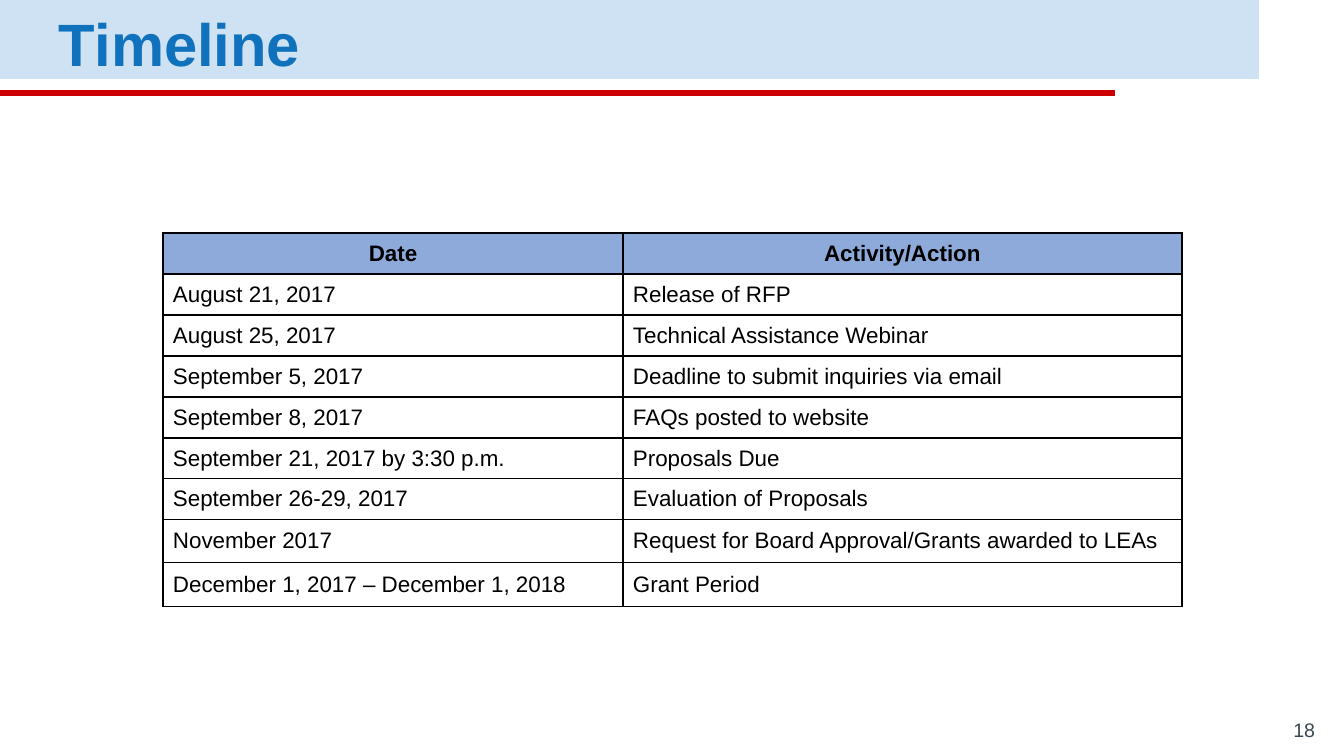
from lxml import etree
from pptx import Presentation
from pptx import util as u
from pptx.dml.color import RGBColor
from pptx.enum import shapes, text
from pptx.oxml import ns

EMU_PER_PX = 914400 / 134.4
FONT = "Arial"
PALE_BLUE = RGBColor(0xCF, 0xE2, 0xF3)
RED = RGBColor(0xCC, 0x00, 0x00)
TITLE_BLUE = RGBColor(0x10, 0x71, 0xBD)
SLATE = RGBColor(0x3A, 0x49, 0x50)
HEADER_BLUE = RGBColor(0x8E, 0xAA, 0xDB)
BLACK = RGBColor(0x00, 0x00, 0x00)

COLUMN_WIDTHS = [460, 559]
ROW_HEIGHTS = [41] * 7 + [43, 44]
TIMELINE = [
    ("Date", "Activity/Action"),
    ("August 21, 2017", "Release of RFP"),
    ("August 25, 2017", "Technical Assistance Webinar"),
    ("September 5, 2017", "Deadline to submit inquiries via email"),
    ("September 8, 2017", "FAQs posted to website"),
    ("September 21, 2017 by 3:30 p.m.", "Proposals Due"),
    ("September 26-29, 2017", "Evaluation of Proposals"),
    ("November 2017", "Request for Board Approval/Grants awarded to LEAs"),
    ("December 1, 2017 – December 1, 2018", "Grant Period"),
]


def px(length):
    return u.Emu(round(length * EMU_PER_PX))


def format_para(para, size, color, bold=False, align=text.PP_ALIGN.LEFT):
    para.alignment = align
    for span in para.runs:
        span.font.name = FONT
        span.font.size = u.Pt(size)
        span.font.bold = bold
        span.font.color.rgb = color


def set_margins(holder, side, upright):
    """Set the insets of a text frame or a table cell."""
    holder.margin_left = holder.margin_right = px(side)
    holder.margin_top = holder.margin_bottom = px(upright)


def add_bar(page, top, width, height, color):
    bar = page.shapes.add_shape(
        shapes.MSO_SHAPE.RECTANGLE, 0, px(top), px(width), px(height))
    bar.shadow.inherit = False
    bar.fill.solid()
    bar.fill.fore_color.rgb = color
    bar.line.fill.background()


def fill_title(page, words):
    title = page.shapes.title
    title.left, title.top, title.width, title.height = map(px, (46, 4, 1213, 66))
    frame = title.text_frame
    frame.text = words
    frame.auto_size = text.MSO_AUTO_SIZE.NONE
    frame.vertical_anchor = text.MSO_ANCHOR.MIDDLE
    set_margins(frame, 13, 13)
    para = frame.paragraphs[0]
    para.line_spacing = 1.15
    para.space_after = u.Pt(16)
    format_para(para, 32, TITLE_BLUE, bold=True)
    # Bring the title in front of the bars
    page.shapes._spTree.append(title._element)


def add_page_number(page, number):
    box = page.shapes.add_textbox(px(1247), px(718), px(81), px(35))
    frame = box.text_frame
    frame.word_wrap = True
    frame.text = number
    frame.vertical_anchor = text.MSO_ANCHOR.BOTTOM
    set_margins(frame, 13, 13)
    format_para(frame.paragraphs[0], 10.5, SLATE, align=text.PP_ALIGN.RIGHT)


def add_borders(cell):
    """Draw a thin black line on all four sides of a cell."""
    props = cell._tc.get_or_add_tcPr()
    for index, side in enumerate(("lnL", "lnR", "lnT", "lnB")):
        line = etree.Element(ns.qn(f"a:{side}"), w=str(u.Pt(1)))
        fill = etree.SubElement(line, ns.qn("a:solidFill"))
        etree.SubElement(fill, ns.qn("a:srgbClr"), val=str(BLACK))
        props.insert(index, line)


def fill_cell(cell, words, is_header):
    cell.text = words
    cell.vertical_anchor = text.MSO_ANCHOR.MIDDLE
    set_margins(cell, 10, 0)
    if is_header:
        cell.fill.solid()
        cell.fill.fore_color.rgb = HEADER_BLUE
    else:
        cell.fill.background()
    align = text.PP_ALIGN.CENTER if is_header else text.PP_ALIGN.LEFT
    format_para(cell.text_frame.paragraphs[0], 12, BLACK, is_header, align)
    add_borders(cell)


def add_timeline(page, left, top):
    table = page.shapes.add_table(
        len(TIMELINE), len(COLUMN_WIDTHS), px(left), px(top),
        px(sum(COLUMN_WIDTHS)), px(sum(ROW_HEIGHTS))).table
    table.horz_banding = False
    for column, width in zip(table.columns, COLUMN_WIDTHS):
        column.width = px(width)
    for index, (row, height) in enumerate(zip(table.rows, ROW_HEIGHTS)):
        row.height = px(height)
        for cell, words in zip(row.cells, TIMELINE[index]):
            fill_cell(cell, words, is_header=index == 0)


def main():
    deck = Presentation()
    deck.slide_width, deck.slide_height = px(1344), px(756)
    page = deck.slides.add_slide(deck.slide_layouts[5])
    add_bar(page, 0, 1259, 79, PALE_BLUE)
    add_bar(page, 90, 1115, 6, RED)
    fill_title(page, "Timeline")
    add_page_number(page, "18")
    add_timeline(page, 163, 233)
    deck.save("out.pptx")


if __name__ == "__main__":
    main()
